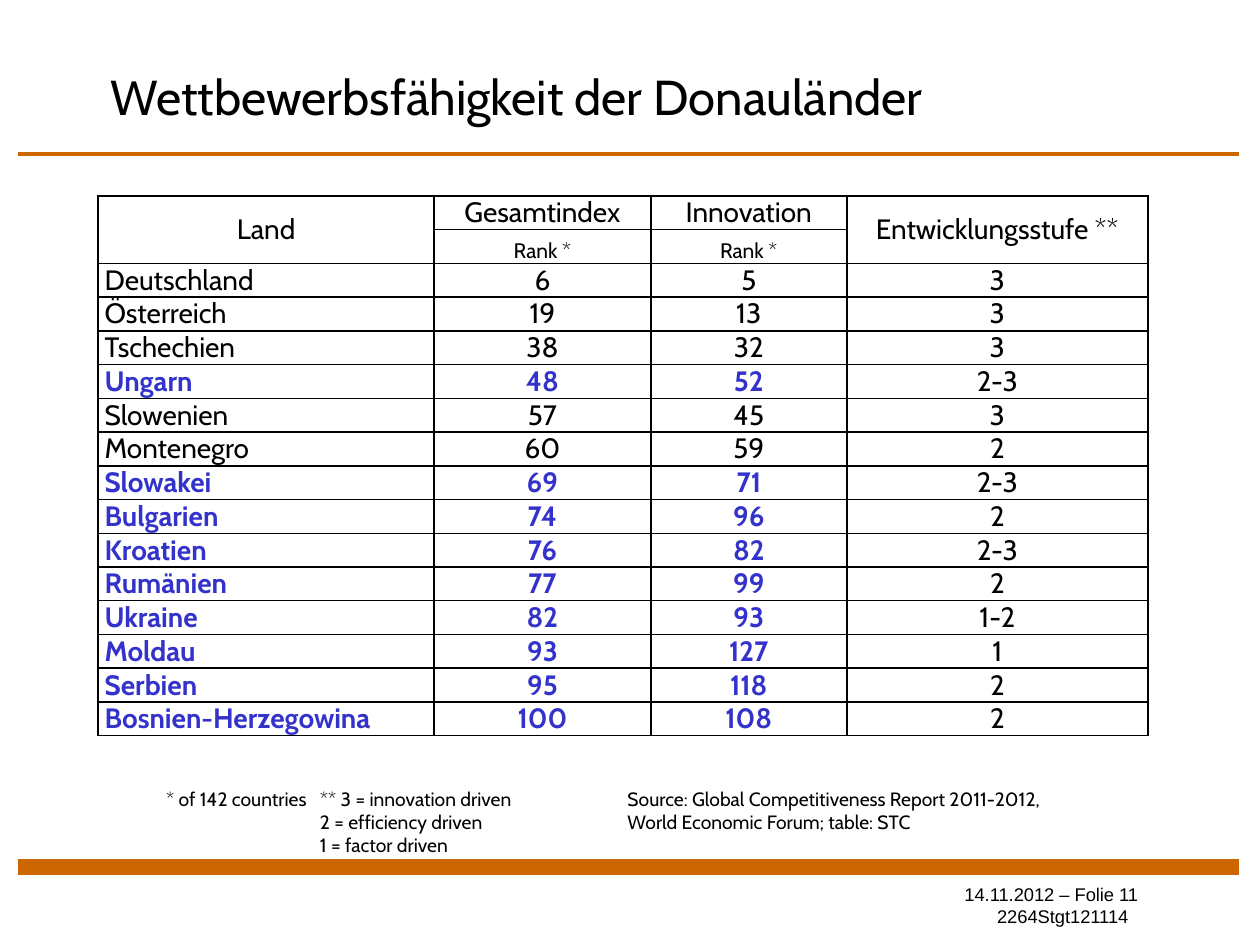
from typing import NamedTuple

from lxml.etree import SubElement
from pptx import Presentation
from pptx.dml.color import RGBColor
from pptx.enum.shapes import MSO_CONNECTOR
from pptx.enum.text import MSO_ANCHOR, MSO_AUTO_SIZE, PP_ALIGN
from pptx.oxml.ns import qn
from pptx.util import Cm, Pt

HUES = {"ink": "000000", "blue": "3333CC", "rust": "CC6600"}
LEFT, WIDE = 1.98, 21.16
COLS = (6.77, 4.37, 3.95, 6.07)
ROW = 0.68


class Land(NamedTuple):
    name: str
    index: str
    rank: str
    stage: str
    marked: bool = False


class Rule(NamedTuple):
    top: float
    weight: float


LANDS = (
    Land("Deutschland", "6", "5", "3"),
    Land("Österreich", "19", "13", "3"),
    Land("Tschechien", "38", "32", "3"),
    Land("Ungarn", "48", "52", "2-3", True),
    Land("Slowenien", "57", "45", "3"),
    Land("Montenegro", "60", "59", "2"),
    Land("Slowakei", "69", "71", "2-3", True),
    Land("Bulgarien", "74", "96", "2", True),
    Land("Kroatien", "76", "82", "2-3", True),
    Land("Rumänien", "77", "99", "2", True),
    Land("Ukraine", "82", "93", "1-2", True),
    Land("Moldau", "93", "127", "1", True),
    Land("Serbien", "95", "118", "2", True),
    Land("Bosnien-Herzegowina", "100", "108", "2", True),
)
RULES = (Rule(3.1, 2), Rule(17.48, 9))


def write(frame, text: str, *, size: float = 16, font: str = "Cabin",
          hue: str = "ink", bold: bool = False, align=PP_ALIGN.LEFT,
          tabs: tuple = (), ends: tuple = ()) -> None:
    """Fill a frame, one paragraph per line; ends holds right indents in cm."""
    for row, line in enumerate(text.split("\n")):
        para = frame.paragraphs[0] if row == 0 else frame.add_paragraph()
        para.alignment = align
        props = para._p.get_or_add_pPr()
        if ends:
            props.set("marR", str(Cm(ends[row])))
        if tabs:
            stops = SubElement(props, qn("a:tabLst"))
            for pos in tabs:
                SubElement(stops, qn("a:tab"), pos=str(Cm(pos)), algn="l")
        run = para.add_run()
        run.text = line
        run.font.size = Pt(size)
        run.font.name = font
        run.font.bold = bold
        run.font.color.rgb = RGBColor.from_string(HUES[hue])


def add_rule(slide, rule: Rule) -> None:
    line = slide.shapes.add_connector(
        MSO_CONNECTOR.STRAIGHT, Cm(0.36), Cm(rule.top), Cm(24.97), Cm(rule.top))
    line.line.color.rgb = RGBColor.from_string(HUES["rust"])
    line.line.width = Pt(rule.weight)
    SubElement(line._element.spPr, qn("a:effectLst"))


def add_box(slide, left: float, top: float, width: float, height: float):
    frame = slide.shapes.add_textbox(
        Cm(left), Cm(top), Cm(width), Cm(height)).text_frame
    frame.word_wrap = True
    return frame


def style_cell(cell) -> None:
    """Give a cell thin black borders, no fill and tight margins."""
    props = cell._tc.get_or_add_tcPr()
    for side in ("lnL", "lnR", "lnT", "lnB"):
        edge = SubElement(props, qn(f"a:{side}"), w=str(Pt(1)))
        fill = SubElement(edge, qn("a:solidFill"))
        SubElement(fill, qn("a:srgbClr"), val=HUES["ink"])
    cell.fill.background()
    cell.margin_left = cell.margin_right = Cm(0.13)
    cell.margin_top = cell.margin_bottom = 0
    cell.vertical_anchor = MSO_ANCHOR.BOTTOM


def add_ranks(slide) -> None:
    count = len(LANDS) + 2
    table = slide.shapes.add_table(
        count, len(COLS), Cm(LEFT), Cm(3.95), Cm(WIDE), Cm(ROW * count)).table
    table.first_row = table.horz_banding = False
    for col, width in zip(table.columns, COLS):
        col.width = Cm(width)
    for row in table.rows:
        row.height = Cm(ROW)
    for cell in table.iter_cells():
        style_cell(cell)

    # Header: outer columns span both rows
    heads = ("Land", "Gesamtindex", "Innovation", "Entwicklungsstufe **")
    for col, head in enumerate(heads):
        cell, lower = table.cell(0, col), table.cell(1, col)
        write(cell.text_frame, head, align=PP_ALIGN.CENTER)
        if col in (0, 3):
            cell.merge(lower)
            cell.vertical_anchor = MSO_ANCHOR.MIDDLE
        else:
            write(lower.text_frame, "Rank *", size=12, align=PP_ALIGN.CENTER)

    # Countries: marked ones are bold blue, except for the stage
    for row, land in enumerate(LANDS, 2):
        for col, text in enumerate(land[:4]):
            strong = land.marked and col < 3
            write(table.cell(row, col).text_frame, text, bold=strong,
                  hue="blue" if strong else "ink",
                  align=PP_ALIGN.CENTER if col else PP_ALIGN.LEFT)


def main() -> None:
    deck = Presentation()
    deck.slide_width, deck.slide_height = Cm(25.4), Cm(19.05)
    slide = deck.slides.add_slide(deck.slide_layouts[5])

    # Rules
    for rule in RULES:
        add_rule(slide, rule)

    # Date and file number
    write(add_box(slide, 18.42, 17.68, 4.88, 1.14),
          "14.11.2012 – Folie 11\n2264Stgt121114",
          size=10.5, font="Arial", align=PP_ALIGN.RIGHT, ends=(0.1, 0.3))

    # Table
    add_ranks(slide)

    # Notes
    notes = add_box(slide, 0, 15.72, 24.03, 1.68)
    notes.vertical_anchor = MSO_ANCHOR.MIDDLE
    write(notes,
          "\t* of 142 countries\t** 3 = innovation driven"
          "\tSource: Global Competitiveness Report 2011-2012,\n"
          "\t\t2 = efficiency driven\tWorld Economic Forum; table: STC\n"
          "\t\t1 = factor driven",
          size=11, tabs=(3.1, 6.2, 12.4))

    # Title
    title = slide.shapes.title
    title.left, title.top = Cm(LEFT), Cm(0)
    title.width, title.height = Cm(WIDE), Cm(3.12)
    frame = title.text_frame
    frame.auto_size = MSO_AUTO_SIZE.NONE
    frame.vertical_anchor = MSO_ANCHOR.TOP
    frame.margin_top = Cm(1.35)
    write(frame, "Wettbewerbsfähigkeit der Donauländer", size=28)

    deck.save("out.pptx")


if __name__ == "__main__":
    main()
